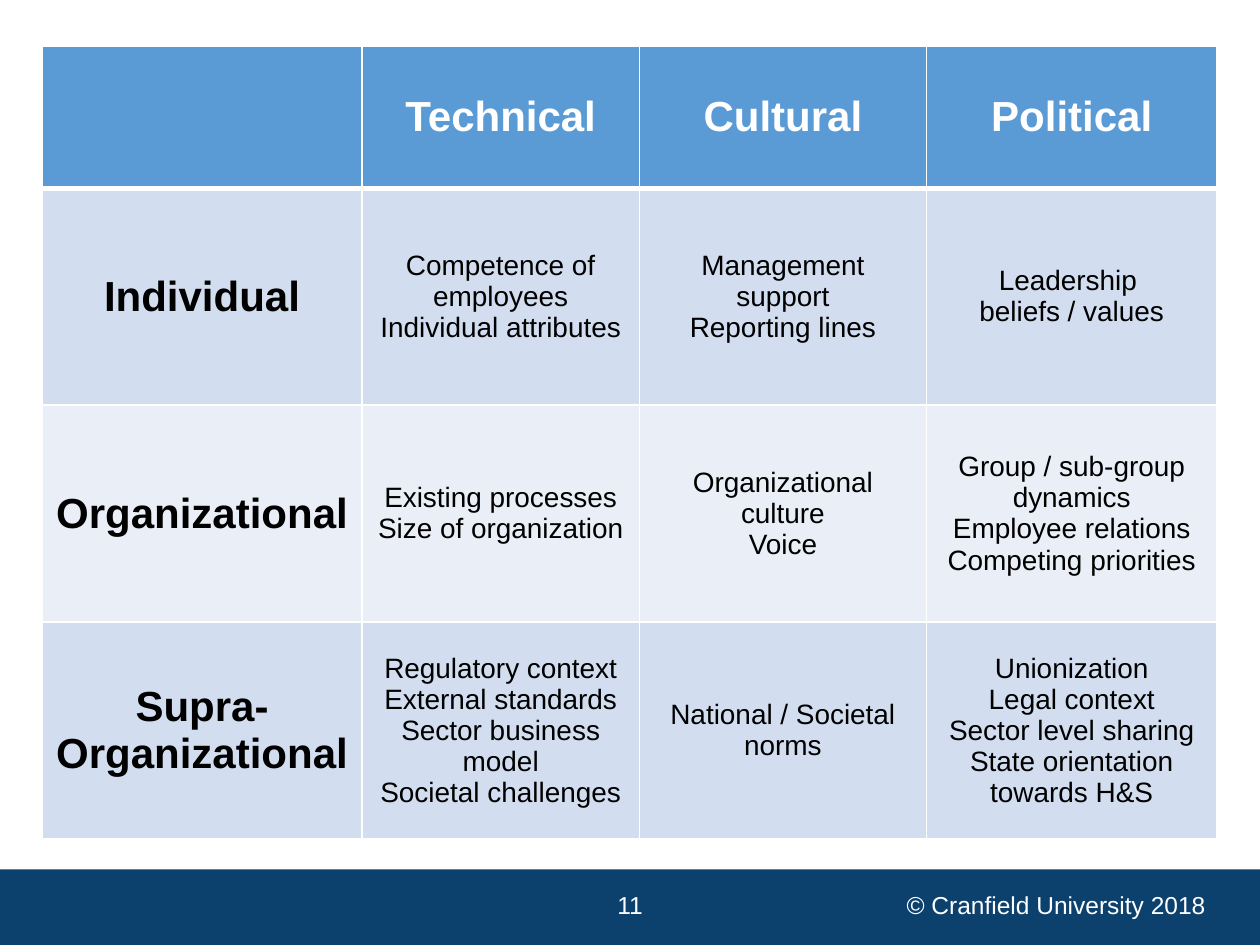
from lxml.etree import SubElement
from pptx import Presentation
from pptx.dml.color import RGBColor
from pptx.enum.shapes import MSO_SHAPE
from pptx.enum.text import MSO_ANCHOR, PP_ALIGN
from pptx.oxml.ns import qn
from pptx.util import Pt

COLORS = {
    "footer": "0C406D",
    "header": "5B9BD5",
    "odd_row": "D2DEEF",
    "even_row": "EAEFF7",
    "white": "FFFFFF",
    "black": "000000",
}
FONT = "Arial"
COLUMN_WIDTHS = [182.9, 158.4, 164.2, 165.9]
ROW_HEIGHTS = [81.4, 124, 124, 124]
ROWS = [
    ["", "Technical", "Cultural", "Political"],
    [
        "Individual",
        "Competence of employees\nIndividual attributes",
        "Management support\nReporting lines",
        "Leadership \nbeliefs / values",
    ],
    [
        "Organizational",
        "Existing processes\nSize of organization",
        "Organizational culture\nVoice",
        "Group / sub-group dynamics\nEmployee relations\nCompeting priorities",
    ],
    [
        "Supra-Organizational",
        "Regulatory context\nExternal standards\nSector business model\nSocietal challenges",
        "National / Societal norms",
        "Unionization\nLegal context\nSector level sharing\nState orientation towards H&S",
    ],
]


def rgb(name):
    return RGBColor.from_string(COLORS[name])


def write_text(frame, text, size, color, align, bold=False):
    frame.text = text
    for para in frame.paragraphs:
        para.alignment = align
        para.font.name = FONT
        para.font.size = Pt(size)
        para.font.bold = bold
        para.font.color.rgb = rgb(color)


def add_footer_bar(slide):
    bar = slide.shapes.add_shape(MSO_SHAPE.RECTANGLE, Pt(0), Pt(496.8), Pt(720), Pt(43.2))
    bar.shadow.inherit = False
    bar.fill.solid()
    bar.fill.fore_color.rgb = rgb("footer")
    bar.line.fill.background()


def add_footer_text(slide, text, left, width, align):
    box = slide.shapes.add_textbox(Pt(left), Pt(504.7), Pt(width), Pt(24.5))
    box.text_frame.word_wrap = True
    box.text_frame.vertical_anchor = MSO_ANCHOR.MIDDLE
    write_text(box.text_frame, text, 14, "white", align)


def set_borders(cell, top, bottom):
    """Draw white borders, with the top and bottom widths given in points."""
    properties = cell._tc.get_or_add_tcPr()
    for side, width in (("L", 1), ("R", 1), ("T", top), ("B", bottom)):
        line = SubElement(properties, qn(f"a:ln{side}"), w=str(Pt(width)))
        fill = SubElement(line, qn("a:solidFill"))
        SubElement(fill, qn("a:srgbClr"), val=COLORS["white"])


def style_cell(cell, text, row, column):
    is_header = row == 0
    is_label = is_header or column == 0
    set_borders(cell, top=3 if row == 1 else 1, bottom=3 if is_header else 1)
    cell.fill.solid()
    row_color = "odd_row" if row % 2 else "even_row"
    cell.fill.fore_color.rgb = rgb("header" if is_header else row_color)
    cell.vertical_anchor = MSO_ANCHOR.MIDDLE
    write_text(
        cell.text_frame,
        text,
        24 if is_label else 16,
        "white" if is_header else "black",
        PP_ALIGN.CENTER,
        bold=is_label,
    )


def add_factor_table(slide):
    table = slide.shapes.add_table(
        len(ROWS), len(COLUMN_WIDTHS), Pt(24), Pt(26.2),
        Pt(sum(COLUMN_WIDTHS)), Pt(sum(ROW_HEIGHTS)),
    ).table
    for column, width in zip(table.columns, COLUMN_WIDTHS):
        column.width = Pt(width)
    for row, height in zip(table.rows, ROW_HEIGHTS):
        row.height = Pt(height)
    for row, texts in enumerate(ROWS):
        for column, text in enumerate(texts):
            style_cell(table.cell(row, column), text, row, column)


def main():
    deck = Presentation()
    deck.slide_width, deck.slide_height = Pt(720), Pt(540)
    slide = deck.slides.add_slide(deck.slide_layouts[6])
    add_footer_bar(slide)
    add_footer_text(slide, "© Cranfield University 2018", 501.8, 194.4, PP_ALIGN.RIGHT)
    add_footer_text(slide, "11", 238.3, 243.4, PP_ALIGN.CENTER)
    add_factor_table(slide)
    deck.save("out.pptx")


if __name__ == "__main__":
    main()
